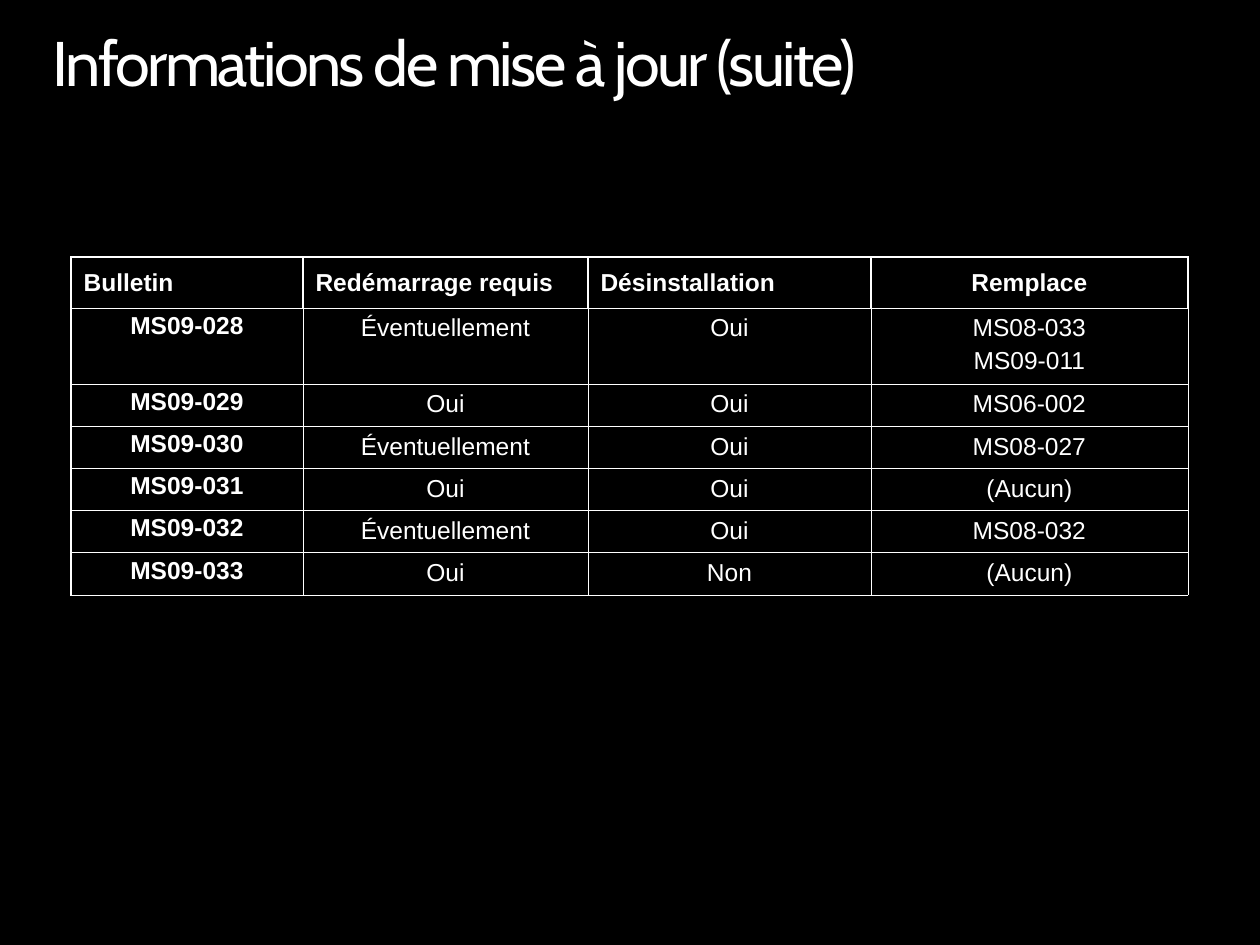
"""Builds the bulletin update information slide."""
from lxml.etree import SubElement
from pptx import Presentation
from pptx.dml.color import RGBColor as RGB
from pptx.enum.text import MSO_ANCHOR as ANCHOR, PP_ALIGN as ALIGN
from pptx.oxml.ns import qn
from pptx.util import Emu, Pt

COLORS = {"back": "000000", "ink": "FFFFFF"}
HEADERS = ["Bulletin", "Redémarrage requis", "Désinstallation", "Remplace"]
BULLETINS = [
    ("MS09-028", "Éventuellement", "Oui", "MS08-033\nMS09-011"),
    ("MS09-029", "Oui", "Oui", "MS06-002"),
    ("MS09-030", "Éventuellement", "Oui", "MS08-027"),
    ("MS09-031", "Oui", "Oui", "(Aucun)"),
    ("MS09-032", "Éventuellement", "Oui", "MS08-032"),
    ("MS09-033", "Oui", "Non", "(Aucun)"),
]
COL_WIDTHS = [232, 285, 283, 317]
ROW_HEIGHTS = [51, 72] + [40] * 5


def px(n):
    return Emu(round(n * 914400 / 126))


class Deck:
    def __init__(self, prs):
        self.s = prs.slides.add_slide(prs.slide_layouts[6])
        fill = self.s.background.fill
        fill.solid()
        fill.fore_color.rgb = RGB.from_string(COLORS["back"])

    def run(self, p, text, size, font, bold=False):
        r = p.add_run()
        r.text = text
        r.font.size, r.font.name, r.font.bold = Pt(size), font, bold
        r.font.color.rgb = RGB.from_string(COLORS["ink"])
        return r

    def title(self, text, x, y, w, h):
        tf = self.s.shapes.add_textbox(px(x), px(y), px(w), px(h)).text_frame
        tf.word_wrap = True
        tf.margin_left = tf.margin_top = tf.margin_right = tf.margin_bottom = 0
        p = tf.paragraphs[0]
        p.line_spacing = 0.9
        r = self.run(p, text, 36, "Cabin")
        r.font._element.set("spc", "-150")

    def borders(self, cell, widths):
        tc_pr = cell._tc.get_or_add_tcPr()
        for i, (side, width) in enumerate(zip("LRTB", widths)):
            ln = SubElement(tc_pr, qn(f"a:ln{side}"), w=str(Pt(width)))
            fill = SubElement(ln, qn("a:solidFill"))
            SubElement(fill, qn("a:srgbClr"), val=COLORS["ink"])
            tc_pr.insert(i, ln)

    def cell(self, cell, text, row, col):
        header, key = row == 0, row > 0 and col == 0
        cell.fill.background()
        if header:
            cell.vertical_anchor = ANCHOR.MIDDLE
        if key:
            cell.margin_left = cell.margin_right = px(9)
            cell.margin_top = cell.margin_bottom = 0
        tf = cell.text_frame
        for i, line in enumerate(text.split("\n")):
            p = tf.add_paragraph() if i else tf.paragraphs[0]
            p.alignment = ALIGN.LEFT if header and col < 3 else ALIGN.CENTER
            if key:
                p.line_spacing = 1.15
            if i:
                p.space_before = Pt(2.8)
            self.run(p, line, 14, "Arial", header or key)
        left = 1 if header or key else 0.25
        top = right = 1 if header else 0.25
        self.borders(cell, (left, right, top, 0.25))

    def table(self, rows, x, y):
        frame = self.s.shapes.add_table(
            len(rows), len(COL_WIDTHS), px(x), px(y),
            px(sum(COL_WIDTHS)), px(sum(ROW_HEIGHTS)))
        table = frame.table
        table.horz_banding = table.first_row = False
        for column, width in zip(table.columns, COL_WIDTHS):
            column.width = px(width)
        for r, (values, height) in enumerate(zip(rows, ROW_HEIGHTS)):
            table.rows[r].height = px(height)
            for c, text in enumerate(values):
                self.cell(table.cell(r, c), text, r, c)


def main():
    prs = Presentation()
    prs.slide_width, prs.slide_height = px(1260), px(945)
    deck = Deck(prs)
    deck.title("Informations de mise à jour (suite)", 53, 32, 1155, 77)
    deck.table([HEADERS] + BULLETINS, 71, 257)
    prs.save("out.pptx")


if __name__ == "__main__":
    main()
